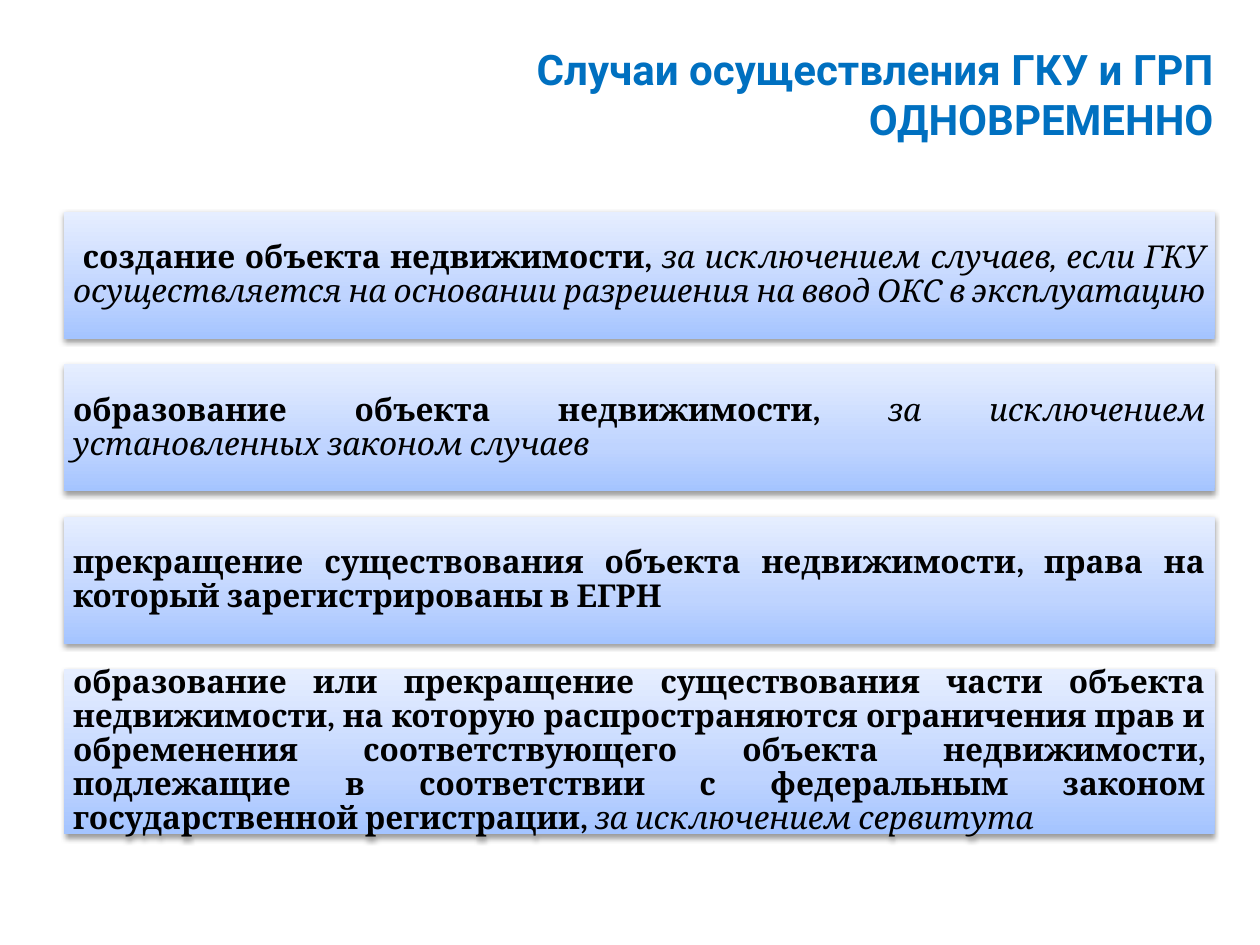
from dataclasses import dataclass

from lxml.etree import SubElement
from pptx import Presentation
from pptx.dml.color import RGBColor
from pptx.enum.shapes import MSO_SHAPE
from pptx.enum.text import MSO_ANCHOR, MSO_AUTO_SIZE, PP_ALIGN
from pptx.oxml.ns import qn
from pptx.util import Inches, Pt


@dataclass(frozen=True)
class Theme:
    title_font: str = "Roboto"
    title_size: int = 24
    title_color: str = "0070C0"
    body_font: str = "Cambria"
    body_size: int = 18
    body_color: str = "000000"
    gradient: tuple = ((0, "A4C4FF"), (35, "BFD4FF"), (100, "E6EEFF"))
    shadow_color: str = "000000"


class SlideBuilder:
    def __init__(self, slide, theme):
        self.slide = slide
        self.theme = theme

    def add_run(self, paragraph, text, name, size, color, bold=True):
        run = paragraph.add_run()
        run.text = text
        run.font.name = name
        run.font.size = Pt(size)
        run.font.color.rgb = RGBColor.from_string(color)
        run.font.bold = bold
        run.font.italic = not bold

    def add_gradient(self, shape):
        shape.fill.gradient()
        shape.fill.gradient_angle = 90
        stops = shape._element.spPr.find(".//" + qn("a:gsLst"))
        for stop in list(stops):
            stops.remove(stop)
        for position, color in self.theme.gradient:
            stop = SubElement(stops, qn("a:gs"), pos=str(position * 1000))
            SubElement(stop, qn("a:srgbClr"), val=color)

    def add_shadow(self, shape):
        shape.shadow.inherit = False
        effects = shape._element.spPr.find(qn("a:effectLst"))
        shadow = SubElement(effects, qn("a:outerShdw"), blurRad=str(Pt(3.1)),
                            dist=str(Pt(1.6)), dir="5400000", rotWithShape="0")
        color = SubElement(shadow, qn("a:srgbClr"), val=self.theme.shadow_color)
        SubElement(color, qn("a:alpha"), val="38000")

    def add_title(self, lines, left, top, width, height):
        box = self.slide.shapes.add_textbox(
            Inches(left), Inches(top), Inches(width), Inches(height))
        frame = box.text_frame
        frame.word_wrap = True
        frame.auto_size = MSO_AUTO_SIZE.SHAPE_TO_FIT_TEXT
        frame.vertical_anchor = MSO_ANCHOR.MIDDLE
        for index, line in enumerate(lines):
            paragraph = frame.add_paragraph() if index else frame.paragraphs[0]
            paragraph.alignment = PP_ALIGN.RIGHT
            self.add_run(paragraph, line, self.theme.title_font,
                         self.theme.title_size, self.theme.title_color)

    def add_panel(self, rule, exception, left, top, width, height):
        shape = self.slide.shapes.add_shape(
            MSO_SHAPE.RECTANGLE,
            Inches(left), Inches(top), Inches(width), Inches(height))
        self.add_gradient(shape)
        shape.line.fill.background()
        self.add_shadow(shape)

        frame = shape.text_frame
        frame.word_wrap = True
        frame.vertical_anchor = MSO_ANCHOR.MIDDLE
        frame.margin_left = frame.margin_right = Inches(0.07)
        frame.margin_top = frame.margin_bottom = Inches(0.07)
        paragraph = frame.paragraphs[0]
        paragraph.alignment = PP_ALIGN.JUSTIFY
        paragraph.line_spacing = 0.9
        for text, bold in ((rule, True), (exception, False)):
            if text:
                self.add_run(paragraph, text, self.theme.body_font,
                             self.theme.body_size, self.theme.body_color, bold)


# Each case: rule, exception, panel height
CASES = [
    (" создание объекта недвижимости, ",
     "за исключением случаев, если ГКУ осуществляется на основании "
     "разрешения на ввод ОКС в эксплуатацию", 1.01),
    ("образование объекта недвижимости, ",
     "за исключением установленных законом случаев", 1.01),
    ("прекращение существования объекта недвижимости, права на который "
     "зарегистрированы в ЕГРН", "", 1.01),
    ("образование или прекращение существования части объекта недвижимости, "
     "на которую распространяются ограничения прав и обременения "
     "соответствующего объекта недвижимости, подлежащие в соответствии с "
     "федеральным законом государственной регистрации, ",
     "за исключением сервитута", 1.31),
]
PANEL_LEFT, PANEL_TOP, PANEL_WIDTH, PANEL_GAP = 0.51, 1.68, 9.13, 0.2


def main():
    presentation = Presentation()
    presentation.slide_width = Inches(10)
    presentation.slide_height = Inches(7.5)
    slide = presentation.slides.add_slide(presentation.slide_layouts[6])
    builder = SlideBuilder(slide, Theme())

    # Stacked panels
    top = PANEL_TOP
    for rule, exception, height in CASES:
        builder.add_panel(rule, exception, PANEL_LEFT, top, PANEL_WIDTH, height)
        top += height + PANEL_GAP

    # Title
    builder.add_title(["Случаи осуществления ГКУ и ГРП", "ОДНОВРЕМЕННО"],
                      2.09, 0.29, 7.64, 0.91)

    presentation.save("out.pptx")


if __name__ == "__main__":
    main()
